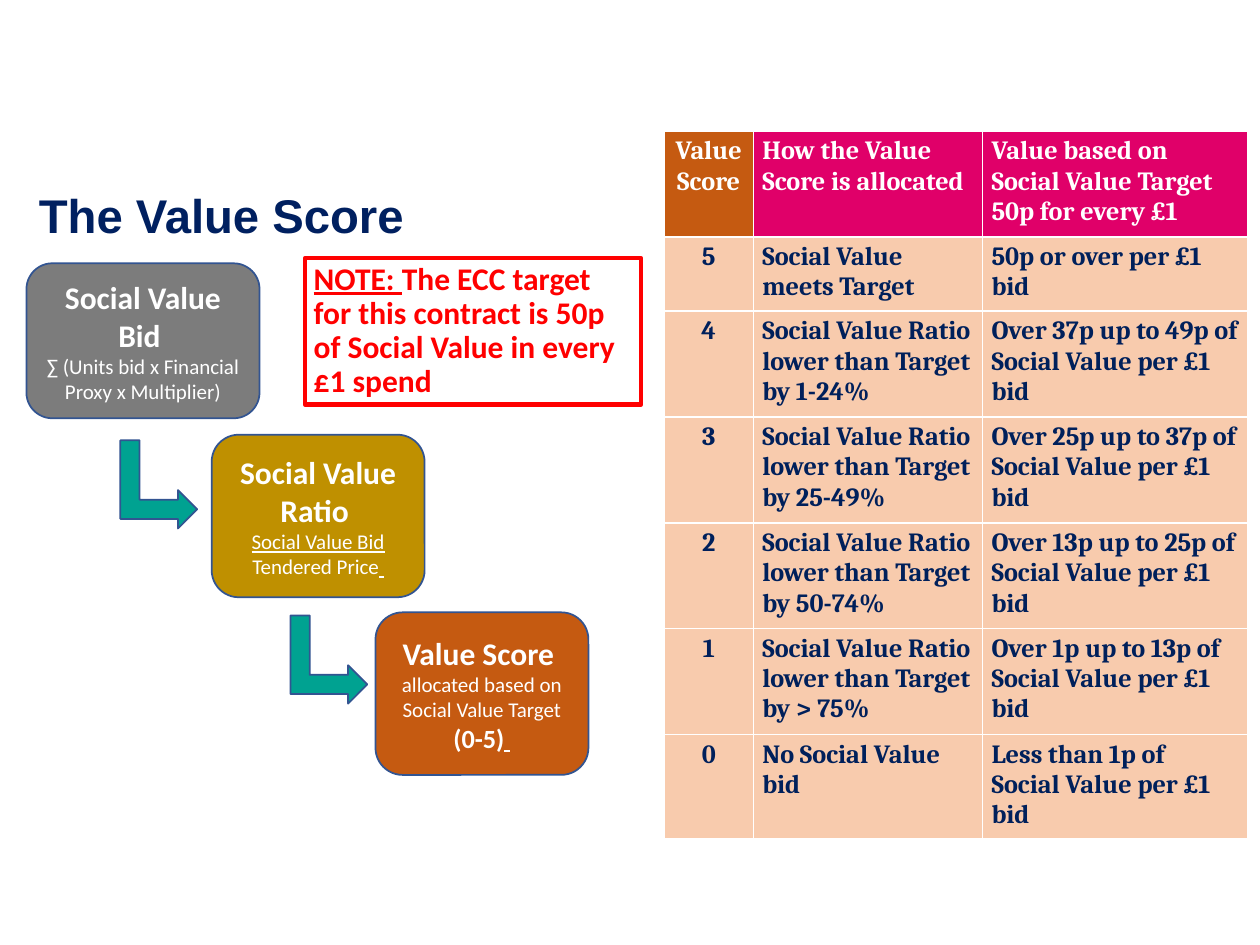
"""Build the slide on how the Value Score is worked out."""
import pptx
import pptx.dml.color
import pptx.enum.shapes
import pptx.enum.text
import pptx.util

Inches = pptx.util.Inches
Shape = pptx.enum.shapes.MSO_SHAPE
Align = pptx.enum.text.PP_ALIGN
Anchor = pptx.enum.text.MSO_ANCHOR


def paint(target, color):
    if hasattr(target, "solid"):
        target.solid()
        target = target.fore_color
    else:
        target = target.color
    target.rgb = pptx.dml.color.RGBColor.from_string(color)


def write(frame, paras, font, color, align=Align.LEFT, space=None):
    frame.word_wrap = True
    for num, runs in enumerate(paras):
        para = frame.add_paragraph() if num else frame.paragraphs[0]
        para.alignment = align
        para.line_spacing = space
        for text, size, bold, under in runs:
            run = para.add_run()
            run.text = text
            run.font.name = font
            run.font.size = pptx.util.Pt(size)
            run.font.bold = bold
            run.font.underline = under
            paint(run.font, color)


deck = pptx.Presentation()
deck.slide_width, deck.slide_height = Inches(10), Inches(7.5)
slide = deck.slides.add_slide(deck.slide_layouts[6])
shapes = slide.shapes

title = shapes.add_textbox(Inches(0.21), Inches(1.48), Inches(9.48), Inches(0.59))
write(title.text_frame, [[("The Value Score", 27, True, False)]], "Arial", "002060", space=0.9)

steps = [
    (0.21, 2.09, 1.85, 1.23, "7C7C7C", [
        [("Social Value Bid ", 18, True, False)],
        [("∑ (Units bid x Financial Proxy x Multiplier)", 12, False, False)]]),
    (1.68, 3.45, 1.69, 1.29, "BF9000", [
        [("Social Value Ratio ", 18, True, False)],
        [("Social Value Bid", 12, False, True)],
        [("Tendered Price", 12, False, False), (" ", 12, False, True)]]),
    (2.98, 4.86, 1.69, 1.29, "C55A11", [
        [("Value Score ", 18, True, False)],
        [("allocated based on Social Value Target ", 12, False, False),
         ("(0-5)", 15, True, False), (" ", 15, True, True)]]),
]
for left, top, width, height, color, paras in steps:
    box = shapes.add_shape(Shape.ROUNDED_RECTANGLE, Inches(left), Inches(top),
                           Inches(width), Inches(height))
    box.shadow.inherit = False
    paint(box.fill, color)
    paint(box.line, "325491")
    box.line.width = pptx.util.Pt(1)
    box.text_frame.vertical_anchor = Anchor.MIDDLE
    write(box.text_frame, paras, "Calibri", "FFFFFF", Align.CENTER)

heads = ["Value Score", "How the Value Score is allocated",
         "Value based on Social Value Target\n50p for every £1"]
rows = [
    heads,
    ["5", "Social Value meets Target", "50p or over per £1 bid"],
    ["4", "Social Value Ratio lower than Target by 1-24%",
     "Over 37p up to 49p of Social Value per £1 bid"],
    ["3", "Social Value Ratio lower than Target by 25-49%",
     "Over 25p up to 37p of Social Value per £1 bid"],
    ["2", "Social Value Ratio lower than Target by 50-74%",
     "Over 13p up to 25p of Social Value per £1 bid"],
    ["1", "Social Value Ratio lower than Target by > 75%",
     "Over 1p up to 13p of Social Value per £1 bid"],
    ["0", "No Social Value bid", "Less than 1p of Social Value per £1 bid"],
]
table = shapes.add_table(len(rows), len(heads), Inches(5.27), Inches(1.04),
                         Inches(4.63), Inches(5.38)).table
for col, width in zip(table.columns, [0.71, 1.82, 2.1]):
    col.width = Inches(width)
for r, texts in enumerate(rows):
    table.rows[r].height = Inches(0.59 if r in (1, 6) else 0.84)
    for c, text in enumerate(texts):
        cell = table.cell(r, c)
        cell.margin_left = cell.margin_right = Inches(0.07)
        cell.margin_top = cell.margin_bottom = Inches(0.04)
        paint(cell.fill, "F8CBAD" if r else "E00069" if c else "C55A11")
        paras = [[(line, 15, True, False)] for line in text.split("\n")]
        write(cell.text_frame, paras, "Cambria", "00205B" if r else "FFFFFF",
              Align.LEFT if c else Align.CENTER)

for left, top in [(0.91, 3.54), (2.26, 4.93)]:
    arrow = shapes.add_shape(Shape.BENT_UP_ARROW, Inches(left), Inches(top),
                             Inches(0.7), Inches(0.61))
    arrow.rotation = 90
    arrow.shadow.inherit = False
    paint(arrow.fill, "00A291")
    paint(arrow.line, "325491")
    arrow.line.width = pptx.util.Pt(1)

note = shapes.add_shape(Shape.RECTANGLE, Inches(2.42), Inches(2.05), Inches(2.67), Inches(1.16))
note.shadow.inherit = False
paint(note.fill, "FFFFFF")
paint(note.line, "FF0000")
note.line.width = pptx.util.Pt(2.5)
frame = note.text_frame
frame.vertical_anchor = Anchor.TOP
frame.margin_left = frame.margin_right = Inches(0.07)
frame.margin_top = frame.margin_bottom = Inches(0.04)
write(frame, [[("NOTE: ", 18, True, True),
               ("The ECC target for this contract is 50p of Social Value in every £1 spend",
                18, True, False)]], "Calibri", "FF0000", space=0.9)

deck.save("out.pptx")
